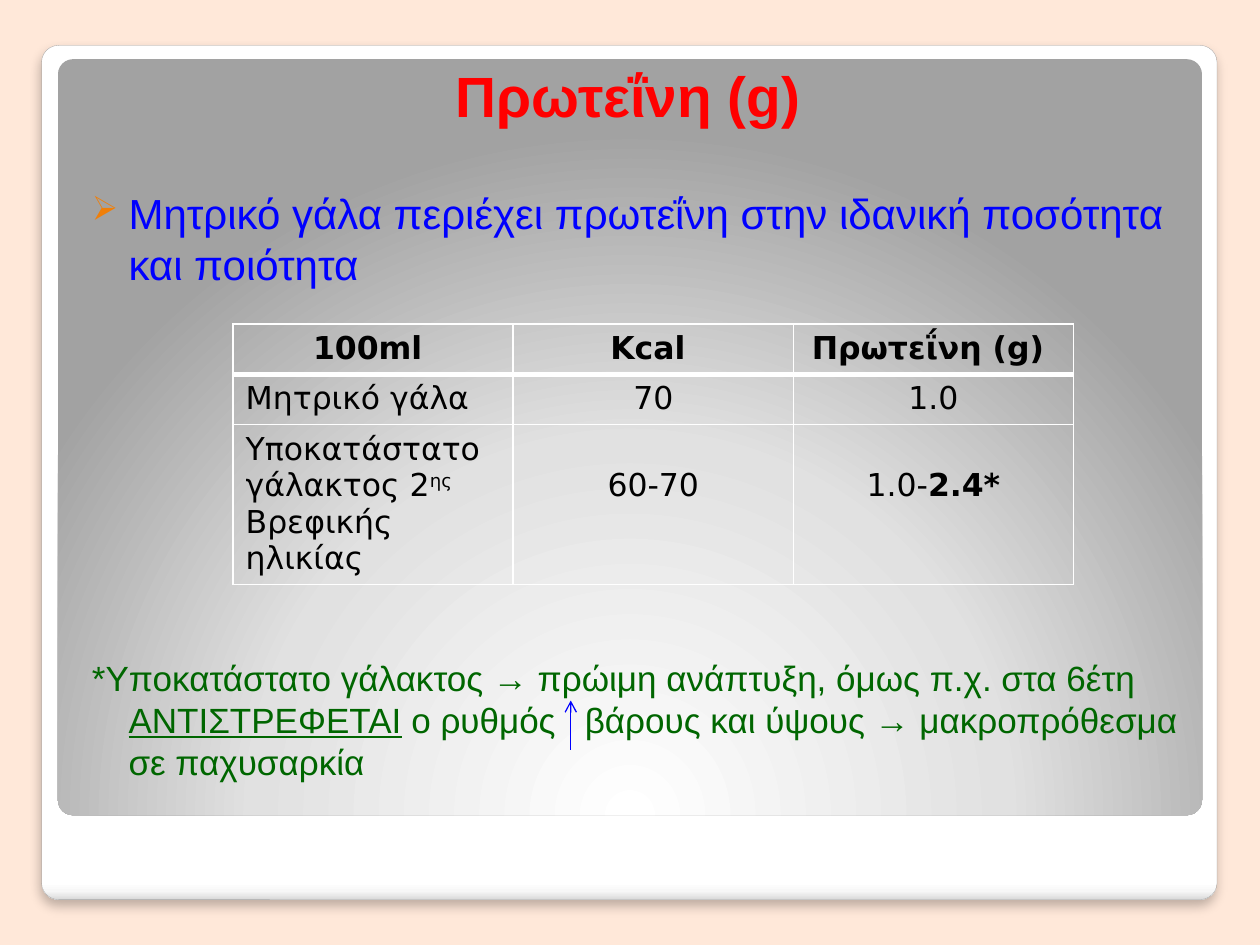
from lxml import etree
from pptx import Presentation
from pptx import util as u
from pptx.dml.color import RGBColor
from pptx.enum import shapes, text
from pptx.oxml.ns import qn

PEACH = RGBColor(0xFF, 0xE8, 0xD9)
WHITE = RGBColor(0xFF, 0xFF, 0xFF)
BLACK = RGBColor(0, 0, 0)
GRAY = RGBColor(0xA4, 0xA4, 0xA4)
RED = RGBColor(0xFF, 0, 0)
BLUE = RGBColor(0, 0, 0xFF)
GREEN = RGBColor(0, 0x66, 0)
ORANGE = RGBColor(0xF0, 0x7F, 0x09)

TITLE = {"size": u.Pt(32.4), "name": "Arial", "bold": True}
LEAD = {"size": u.Pt(24), "name": "Arial"}
NOTE = {"size": u.Pt(20), "name": "Arial"}
CELL = {"size": u.Pt(18), "name": "DejaVu Sans", "bold": False}
HEADER = {**CELL, "bold": True}

FRAME_STOPS = [(0, "FFFFFF"), (98, "FFFFFF"), (99, "F7F7F7"), (100, "DADADA")]
PANEL_STOPS = [(0, "FFFFFF"), (55, "E1E1E1"), (100, "A2A2A2")]

ROWS = [
    [[[("100ml ", {})]], [[("Kcal ", {})]], [[("Πρωτεΐνη (g) ", {})]]],
    [[[("Μητρικό γάλα", {})]], [[("70", {})]], [[("1.0", {})]]],
    [
        [[("Υποκατάστατο γάλακτος 2", {}), ("ης", {"baseline": 30000})],
         [("Βρεφικής ηλικίας", {})]],
        [[("60-70", {})]],
        [[("1.0-", {}), ("2.4*", {"bold": True})]],
    ],
]
ROW_HEIGHTS = [0.4, 0.4, 1.27]


def set_values(target, values):
    """Set every attribute of the dict on the target."""
    for name, value in values.items():
        setattr(target, name, value)


def add_xml(parent, tag, **attributes):
    """Append a DrawingML child element with the given attributes."""
    element = etree.SubElement(parent, qn(tag))
    for name, value in attributes.items():
        element.set(name, str(value))
    return element


def add_run(paragraph, words, style, color, baseline=None, spacing=None, **extra):
    """Add a formatted run, optionally raised or letter-spaced."""
    run = paragraph.add_run()
    run.text = words
    set_values(run.font, {**style, **extra})
    run.font.color.rgb = color
    for name, value in (("baseline", baseline), ("spc", spacing)):
        if value is not None:
            run._r.get_or_add_rPr().set(name, str(value))


def add_panel(slide, box, stops):
    """Add a rounded panel with gradient stops and return it with its gradient."""
    shape = slide.shapes.add_shape(
        shapes.MSO_SHAPE.ROUNDED_RECTANGLE, *map(u.Inches, box))
    shape.adjustments[0] = 0.02
    shape.shadow.inherit = False
    shape.line.fill.background()
    shape.fill.solid()
    solid = shape._element.spPr.find(qn("a:solidFill"))
    gradient = etree.Element(qn("a:gradFill"), rotWithShape="1")
    solid.getparent().replace(solid, gradient)
    stop_list = add_xml(gradient, "a:gsLst")
    for position, color in stops:
        stop = add_xml(stop_list, "a:gs", pos=position * 1000)
        add_xml(stop, "a:srgbClr", val=color)
    return shape, gradient


def add_panels(slide):
    """Add the white outer frame and the gray inner panel."""
    frame, gradient = add_panel(slide, (0.33, 0.36, 9.33, 6.78), FRAME_STOPS)
    add_xml(gradient, "a:lin", ang=5400000, scaled=0)
    frame.line.color.rgb = GRAY
    frame.line.width = u.Pt(0.16)
    effects = frame._element.spPr.find(qn("a:effectLst"))
    shadow = add_xml(effects, "a:outerShdw", blurRad=u.Pt(6), dist=u.Pt(4),
                     dir=5400000, algn="t", rotWithShape=0)
    add_xml(add_xml(shadow, "a:srgbClr", val=BLACK), "a:alpha", val=25000)

    gradient = add_panel(slide, (0.46, 0.47, 9.08, 6), PANEL_STOPS)[1]
    center = add_xml(gradient, "a:path", path="circle")
    add_xml(center, "a:fillToRect", l=50000, t=175000, r=50000, b=-75000)


def add_title(slide):
    """Place and format the title above the panels."""
    title = slide.shapes.title
    slide.shapes._spTree.append(title._element)
    set_values(title, {"left": u.Inches(0.51), "top": u.Inches(0.44),
                       "width": u.Inches(8.95), "height": u.Inches(0.63)})
    set_values(title.text_frame, {"auto_size": text.MSO_AUTO_SIZE.NONE,
                                  "vertical_anchor": text.MSO_ANCHOR.BOTTOM})
    paragraph = title.text_frame.paragraphs[0]
    paragraph.alignment = text.PP_ALIGN.CENTER
    add_run(paragraph, "Πρωτεΐνη (g)", TITLE, RED)


def set_hanging(paragraph, space_before):
    """Give a paragraph a hanging indent and return its properties element."""
    paragraph.space_before = u.Pt(space_before)
    properties = paragraph._p.get_or_add_pPr()
    properties.set("marL", str(u.Inches(0.29)))
    properties.set("indent", str(u.Inches(-0.29)))
    return properties


def add_body(slide):
    """Add the bulleted lead and the footnote below the table."""
    box = slide.shapes.add_textbox(*map(u.Inches, (0.53, 1.39, 8.95, 5.45)))
    frame = box.text_frame
    set_values(frame, {"word_wrap": True, "margin_left": u.Inches(0.2),
                       "margin_top": u.Inches(0.1), "margin_right": u.Inches(0.1),
                       "margin_bottom": u.Inches(0.05)})
    lead = frame.paragraphs[0]
    properties = set_hanging(lead, 2.5)
    add_xml(add_xml(properties, "a:buClr"), "a:srgbClr", val=ORANGE)
    add_xml(properties, "a:buSzPct", val=80000)
    add_xml(properties, "a:buChar", char="➢")
    add_run(lead, "Μητρικό γάλα περιέχει πρωτεΐνη στην ιδανική ποσότητα και ποιότητα",
            LEAD, BLUE)

    note = frame.add_paragraph()
    add_xml(set_hanging(note, 210), "a:buNone")
    for words, extra in (
        ("*Υποκατάστατο γάλακτος → πρώιμη ανάπτυξη, όμως π.χ. στα 6έτη ", {}),
        ("ΑΝΤΙΣΤΡΕΦΕΤΑΙ", {"underline": True}),
        (" ο ρυθμός", {}),
        (" ", {"spacing": 1100}),
        ("βάρους και ύψους → μακροπρόθεσμα σε παχυσαρκία", {}),
    ):
        add_run(note, words, NOTE, GREEN, **extra)


def set_borders(cell, widths):
    """Draw white cell borders with a width in points for each side."""
    properties = cell._tc.get_or_add_tcPr()
    for index, (side, width) in enumerate(widths.items()):
        line = etree.Element(qn(f"a:ln{side}"), w=str(u.Pt(width)))
        add_xml(add_xml(line, "a:solidFill"), "a:srgbClr", val=WHITE)
        properties.insert(index, line)


def fill_cell(cell, paragraphs, row, column):
    """Write and format one table cell."""
    cell.fill.background()
    set_borders(cell, {"L": 1, "R": 1, "T": 3 if row == 1 else 1,
                       "B": 3 if row == 0 else 1})
    if row == 2 and column > 0:
        cell.margin_top = u.Inches(0.34)
    for index, runs in enumerate(paragraphs):
        frame = cell.text_frame
        paragraph = frame.add_paragraph() if index else frame.paragraphs[0]
        centered = row == 0 or column > 0
        paragraph.alignment = text.PP_ALIGN.CENTER if centered else text.PP_ALIGN.LEFT
        for words, extra in runs:
            add_run(paragraph, words, CELL if row else HEADER, BLACK, **extra)


def add_protein_table(slide):
    """Add the comparison of milk and substitute."""
    box = (1.85, 2.57, 6.67, sum(ROW_HEIGHTS))
    table = slide.shapes.add_table(len(ROWS), len(ROWS[0]), *map(u.Inches, box)).table
    set_values(table, {"first_row": False, "horz_banding": False})
    for row, (height, cells) in enumerate(zip(ROW_HEIGHTS, ROWS)):
        table.rows[row].height = u.Inches(height)
        for column, paragraphs in enumerate(cells):
            fill_cell(table.cell(row, column), paragraphs, row, column)


def add_up_arrow(slide):
    """Add the rising arrow inside the footnote."""
    arrow = slide.shapes.add_connector(
        shapes.MSO_CONNECTOR.STRAIGHT, *map(u.Inches, (4.53, 5.95, 4.53, 5.56)))
    arrow.line.color.rgb = BLUE
    arrow.line.width = u.Pt(0.75)
    add_xml(arrow.line._get_or_add_ln(), "a:tailEnd", type="arrow")
    add_xml(arrow._element.spPr, "a:effectLst")


def main():
    """Build and save the protein slide."""
    presentation = Presentation()
    set_values(presentation, {"slide_width": u.Inches(10), "slide_height": u.Inches(7.5)})
    slide = presentation.slides.add_slide(presentation.slide_layouts[5])
    slide.background.fill.solid()
    slide.background.fill.fore_color.rgb = PEACH
    add_panels(slide)
    add_body(slide)
    add_title(slide)
    add_protein_table(slide)
    add_up_arrow(slide)
    presentation.save("out.pptx")


if __name__ == "__main__":
    main()
